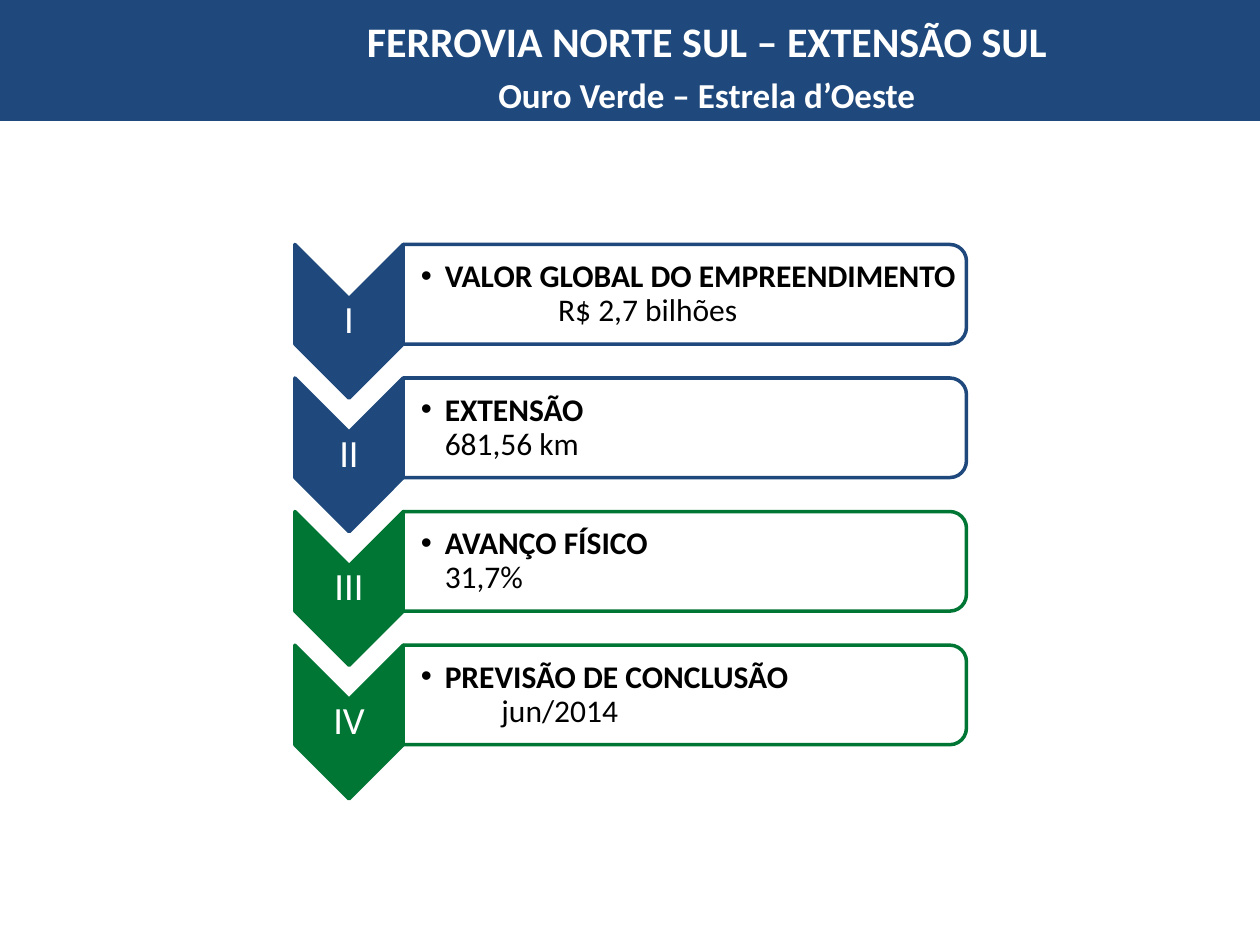
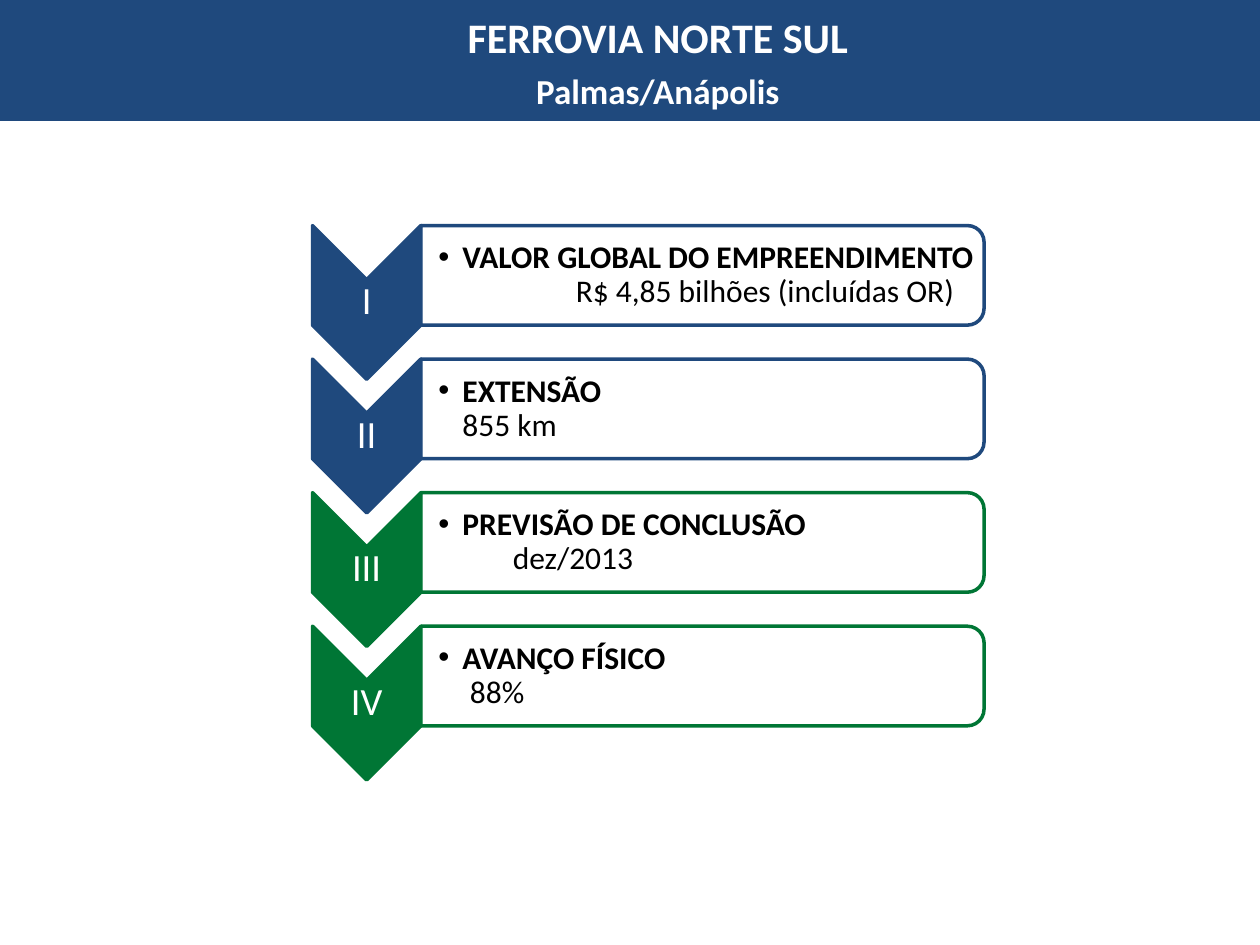
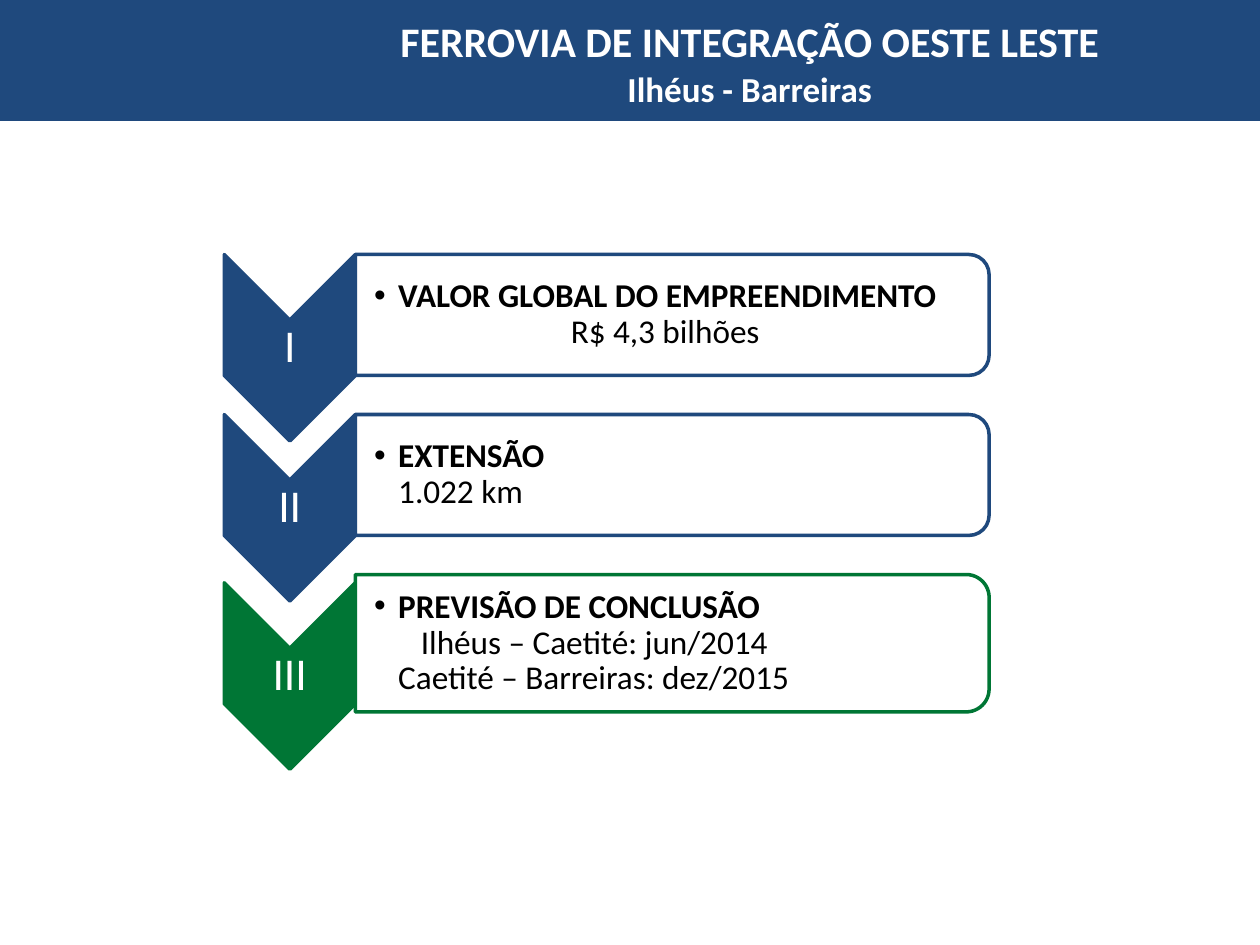
from pptx import Presentation
from pptx.dml.color import RGBColor
from pptx.enum.shapes import MSO_SHAPE
from pptx.enum.text import MSO_ANCHOR, PP_ALIGN
from pptx.oxml.ns import qn
from pptx.util import Inches, Pt
from lxml.etree import SubElement

BLUE, GREEN, WHITE, BLACK = "1F497D", "007635", "FFFFFF", "000000"
NUMERALS = ["I", "II", "III", "IV"]

COMPACT = dict(chevron_w=0.86, chevron_h=1.22, box_w=4.47, box_h=0.79, gap=0.27,
               numeral_size=22, fact_size=18, inset=0.14)
LARGE = dict(chevron_w=1.04, chevron_h=1.48, box_w=5.03, box_h=0.96, gap=0.31,
             numeral_size=26, fact_size=19, inset=0.15)

RAILWAYS = [
    dict(title="FERROVIA NORTE SUL – EXTENSÃO SUL", stretch="Ouro Verde – Estrela d’Oeste",
         title_center=5.61, title_inset=0.15, title_gap=4.5,
         left=2.34, top=1.94, layout=COMPACT,
         facts=[("VALOR GLOBAL DO EMPREENDIMENTO", [("R$ 2,7 bilhões", 0.9)]),
                ("EXTENSÃO", [("681,56 km", 0)]),
                ("AVANÇO FÍSICO", [("31,7%", 0)]),
                ("PREVISÃO DE CONCLUSÃO", [("jun/2014", 0.45)])]),
    dict(title="FERROVIA NORTE SUL", stretch="Palmas/Anápolis",
         title_center=5.22, title_inset=0.12, title_gap=4.5,
         left=2.48, top=1.79, layout=COMPACT,
         facts=[("VALOR GLOBAL DO EMPREENDIMENTO", [("R$ 4,85 bilhões (incluídas OR)", 0.9)]),
                ("EXTENSÃO", [("855 km", 0)]),
                ("PREVISÃO DE CONCLUSÃO", [("dez/2013", 0.4)]),
                ("AVANÇO FÍSICO", [("88%", 0.06)])]),
    dict(title="FERROVIA DE INTEGRAÇÃO OESTE LESTE", stretch="Ilhéus - Barreiras",
         title_center=5.95, title_inset=0.15, title_gap=1,
         left=1.78, top=2.02, layout=LARGE,
         facts=[("VALOR GLOBAL DO EMPREENDIMENTO", [("R$ 4,3 bilhões", 1.37)]),
                ("EXTENSÃO", [("1.022 km", 0)]),
                ("PREVISÃO DE CONCLUSÃO", [("Ilhéus – Caetité: jun/2014", 0.18),
                                           ("Caetité – Barreiras: dez/2015", 0)])]),
]
EXTRA_LINE_H = 0.13
HANGING = 0.19


def color(hex_code):
    return RGBColor.from_string(hex_code)


def add_filled(slide, preset, x, y, w, h, fill, outline=None, rotation=0):
    shape = slide.shapes.add_shape(preset, Inches(x), Inches(y), Inches(w), Inches(h))
    shape.shadow.inherit = False
    shape.rotation = rotation
    shape.fill.solid()
    shape.fill.fore_color.rgb = color(fill)
    if outline:
        shape.line.color.rgb = color(outline)
        shape.line.width = Pt(2)
    else:
        shape.line.fill.background()
    return shape


def add_quarter_turned(slide, preset, x, y, w, h, fill, outline):
    return add_filled(slide, preset, x + (w - h) / 2, y + (h - w) / 2, h, w, fill, outline, 90)


def set_frame(shape, insets, anchor):
    frame = shape.text_frame
    frame.word_wrap = True
    frame.vertical_anchor = anchor
    frame.margin_left, frame.margin_top, frame.margin_right, frame.margin_bottom = map(Inches, insets)
    return frame


def add_text_area(slide, x, y, w, h, insets):
    area = slide.shapes.add_textbox(Inches(x), Inches(y), Inches(w), Inches(h))
    return set_frame(area, insets, MSO_ANCHOR.MIDDLE)


def write(paragraph, text, size, ink, bold=False, align=PP_ALIGN.LEFT):
    paragraph.text = text
    paragraph.alignment = align
    for run in paragraph.runs:
        run.font.name, run.font.size, run.font.bold = "Calibri", Pt(size), bold
        run.font.color.rgb = color(ink)


def indent(paragraph, margin, hanging=0):
    properties = paragraph._p.get_or_add_pPr()
    properties.set("marL", str(Inches(margin)))
    properties.set("indent", str(-Inches(hanging)))
    if hanging:
        SubElement(properties, qn("a:buFont")).set("typeface", "Arial")
        SubElement(properties, qn("a:buChar")).set("char", "•")


def add_header(slide, railway):
    band = add_filled(slide, MSO_SHAPE.RECTANGLE, 0, -0.03, 10, 0.99, BLUE)
    left_inset = 2 * railway["title_center"] - 9.9
    frame = set_frame(band, (left_inset, railway["title_inset"], 0.1, 0), MSO_ANCHOR.TOP)
    write(frame.paragraphs[0], railway["title"], 24, WHITE, True, PP_ALIGN.CENTER)
    stretch = frame.add_paragraph()
    write(stretch, railway["stretch"], 20, WHITE, True, PP_ALIGN.CENTER)
    stretch.space_before = Pt(railway["title_gap"])


def add_fact(slide, numeral, fact, accent, x, y, box_h, layout):
    heading, values = fact
    chevron_w, chevron_h = layout["chevron_w"], layout["chevron_h"]
    chevron_y = y + (box_h - layout["box_h"]) / 2
    add_quarter_turned(slide, MSO_SHAPE.CHEVRON, x, chevron_y, chevron_w, chevron_h, accent, accent)
    label = add_text_area(slide, x, chevron_y + chevron_w / 2, chevron_w, chevron_h - chevron_w,
                          (0.02,) * 4)
    write(label.paragraphs[0], numeral, layout["numeral_size"], WHITE, align=PP_ALIGN.CENTER)
    label.paragraphs[0].line_spacing = 0.9

    box_x = x + chevron_w
    box = add_quarter_turned(slide, MSO_SHAPE.ROUND_2_SAME_RECTANGLE, box_x, y,
                             layout["box_w"], box_h, WHITE, accent)
    fill_color = box._element.spPr.find(qn("a:solidFill"))[0]
    SubElement(fill_color, qn("a:alpha")).set("val", "90000")

    frame = add_text_area(slide, box_x, y + 0.04, layout["box_w"] - 0.04, box_h - 0.08,
                          (layout["inset"], 0.01, 0.01, 0.01))
    write(frame.paragraphs[0], heading, layout["fact_size"], BLACK, True)
    indent(frame.paragraphs[0], HANGING, HANGING)
    for value, shift in values:
        line = frame.add_paragraph()
        write(line, value, layout["fact_size"], BLACK)
        indent(line, HANGING + shift)
    for paragraph in frame.paragraphs:
        paragraph.line_spacing = 0.9


def main():
    deck = Presentation()
    deck.slide_width, deck.slide_height = Inches(10), Inches(7.5)
    for railway in RAILWAYS:
        slide = deck.slides.add_slide(deck.slide_layouts[6])
        add_header(slide, railway)
        layout, y = railway["layout"], railway["top"]
        for index, fact in enumerate(railway["facts"]):
            box_h = layout["box_h"] + EXTRA_LINE_H * (len(fact[1]) - 1)
            accent = BLUE if index < 2 else GREEN
            add_fact(slide, NUMERALS[index], fact, accent, railway["left"], y, box_h, layout)
            y += box_h + layout["gap"]
    deck.save("out.pptx")


if __name__ == "__main__":
    main()
